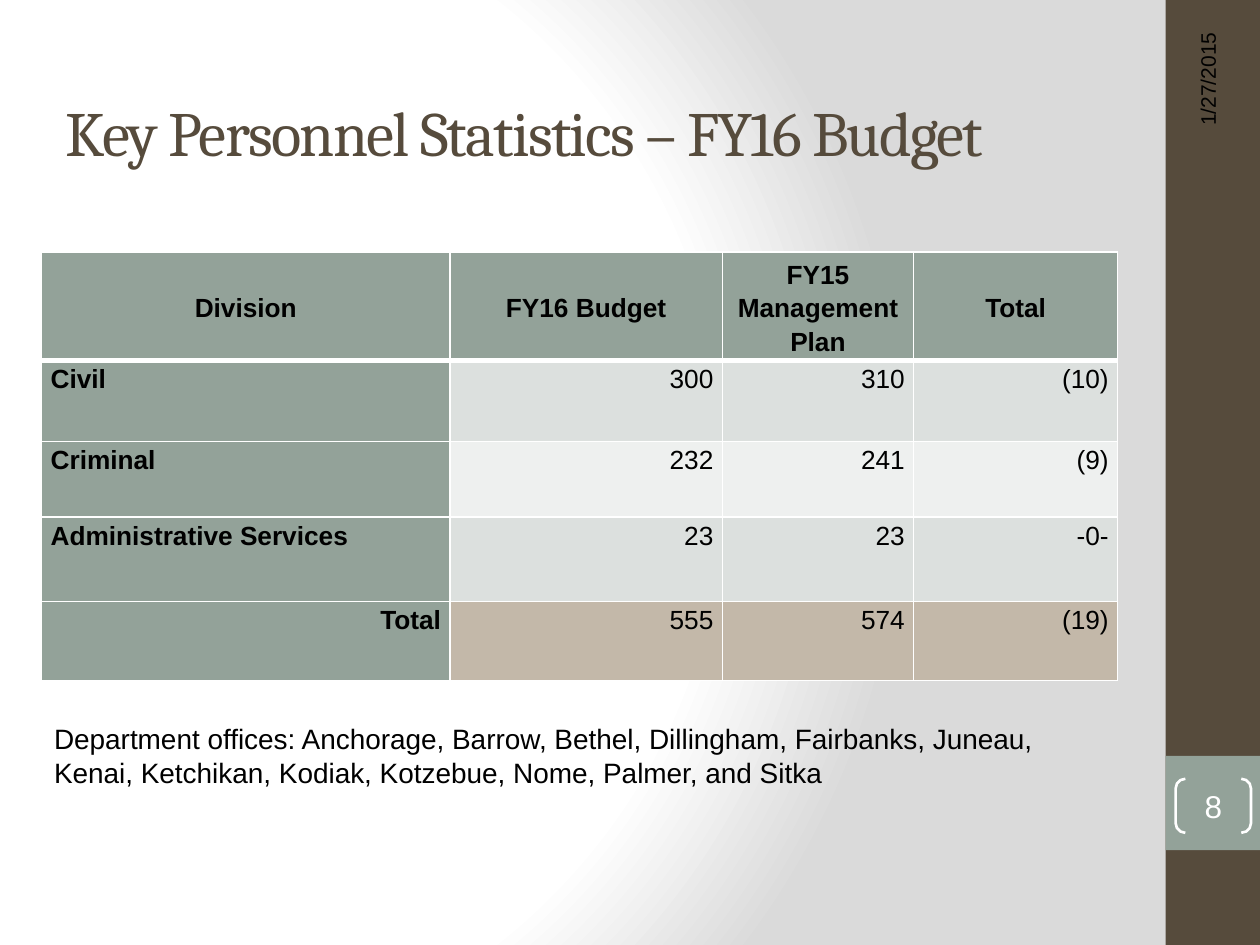
"""Build the key personnel statistics slide."""
from pptx import Presentation
from pptx import util as u
from pptx.dml.color import RGBColor
from pptx.enum import shapes, text
from pptx.oxml import parse_xml
from pptx.oxml.ns import nsdecls

TITLE = "Key Personnel Statistics – FY16 Budget"
DATE = "1/27/2015"
PAGE = "8"
OFFICES = ("Department offices: Anchorage, Barrow, Bethel, Dillingham, Fairbanks, Juneau, "
           "Kenai, Ketchikan, Kodiak, Kotzebue, Nome, Palmer, and Sitka")
ROWS = [
    ("Division", "FY16 Budget", "FY15 Management Plan", "Total"),
    ("Civil", "300", "310", "(10)"),
    ("Criminal", "232", "241", "(9)"),
    ("Administrative Services", "23", "23", "-0-"),
    ("Total", "555", "574", "(19)"),
]
COLUMN_WIDTHS = (8.23, 5.49, 3.86, 4.11)
ROW_HEIGHTS = (2.03, 1.63, 1.52, 1.7, 1.6)
BROWN, SAGE, WHITE, BLACK = "564B3C", "93A299", "FFFFFF", "000000"
ROW_FILLS = (SAGE, "DCE0DE", "EEF0EF", "DCE0DE", "C3B8A9")
LEFT, CENTER, RIGHT = text.PP_ALIGN.LEFT, text.PP_ALIGN.CENTER, text.PP_ALIGN.RIGHT
TOP, MIDDLE = text.MSO_ANCHOR.TOP, text.MSO_ANCHOR.MIDDLE


def paint(color_format, value):
    color_format.rgb = RGBColor.from_string(value)


def fill(target, value):
    target.fill.solid()
    paint(target.fill.fore_color, value)


def box(left, top, width, height):
    return [u.Cm(value) for value in (left, top, width, height)]


def write(frame, words, size, color, align=LEFT, bold=False, font="Arial"):
    frame.word_wrap = True
    paragraph = frame.paragraphs[0]
    paragraph.alignment = align
    run = paragraph.add_run()
    run.text = words
    run.font.size = u.Pt(size)
    run.font.name = font
    run.font.bold = bold
    paint(run.font.color, color)
    return paragraph, run


def add_background(slide):
    slide.background.fill.solid()
    properties = slide.element.xpath("p:cSld/p:bg/p:bgPr")[0]
    stops = "".join(f'<a:gs pos="{position * 1000}"><a:srgbClr val="{color}"/></a:gs>'
                    for position, color in ((0, WHITE), (75, WHITE), (100, "DADADA")))
    properties.replace(properties[0], parse_xml(
        f'<a:gradFill {nsdecls("a")} rotWithShape="1"><a:gsLst>{stops}</a:gsLst><a:path path="circle">'
        '<a:fillToRect l="20000" t="50000" r="100000" b="50000"/></a:path></a:gradFill>'))


def add_shape(slide, kind, place, color=None):
    shape = slide.shapes.add_shape(kind, *box(*place))
    shape.shadow.inherit = False
    if color:
        fill(shape, color)
        shape.line.fill.background()
    else:
        shape.fill.background()
    return shape


def add_title(slide):
    title = slide.shapes.title
    title.left, title.top, title.width, title.height = box(1.07, 0.84, 21.59, 3.6)
    title.text_frame.auto_size = text.MSO_AUTO_SIZE.NONE
    title.text_frame.vertical_anchor = MIDDLE
    run = write(title.text_frame, TITLE, 36, BROWN, font="Cambria")[1]
    properties = run.font._element
    properties.set("spc", "-100")
    properties.insert(0, parse_xml(f'<a:ln {nsdecls("a")} w="12700"><a:solidFill>'
                                   '<a:srgbClr val="42402C"/></a:solidFill></a:ln>'))


def add_text_box(slide, place, words, size, align=LEFT):
    text_box = slide.shapes.add_textbox(*box(*place))
    write(text_box.text_frame, words, size, BLACK, align)
    return text_box


def add_borders(cell, row):
    properties = cell._tc.get_or_add_tcPr()
    widths = {"L": 1, "R": 1, "T": 3 if row == 1 else 1, "B": 3 if row == 0 else 1}
    for side, points in widths.items():
        properties.append(parse_xml(
            f'<a:ln{side} {nsdecls("a")} w="{u.Pt(points)}"><a:solidFill>'
            f'<a:srgbClr val="{WHITE}"/></a:solidFill></a:ln{side}>'))


def add_statistics(slide):
    place = box(0.84, 5.08, sum(COLUMN_WIDTHS), sum(ROW_HEIGHTS))
    table = slide.shapes.add_table(len(ROWS), len(COLUMN_WIDTHS), *place).table
    table.first_col = True
    for column, width in zip(table.columns, COLUMN_WIDTHS):
        column.width = u.Cm(width)
    for row, height in zip(table.rows, ROW_HEIGHTS):
        row.height = u.Cm(height)
    for i, values in enumerate(ROWS):
        for j, value in enumerate(values):
            cell = table.cell(i, j)
            header = i == 0
            add_borders(cell, i)
            fill(cell, SAGE if j == 0 else ROW_FILLS[i])
            cell.margin_left = cell.margin_right = u.Cm(0.18)
            cell.margin_top = cell.margin_bottom = 0
            cell.vertical_anchor = MIDDLE if header else TOP
            label = j == 0 and i < len(ROWS) - 1
            align = CENTER if header else LEFT if label else RIGHT
            paragraph = write(cell.text_frame, value, 15, BLACK, align, header or j == 0)[0]
            paragraph.line_spacing = 1.15


def main():
    presentation = Presentation()
    presentation.slide_width, presentation.slide_height = u.Cm(25.4), u.Cm(19.05)
    slide = presentation.slides.add_slide(presentation.slide_layouts[5])
    add_background(slide)
    add_shape(slide, shapes.MSO_SHAPE.RECTANGLE, (23.5, 0, 1.9, 19.05), BROWN)
    add_shape(slide, shapes.MSO_SHAPE.RECTANGLE, (23.5, 15.24, 1.9, 1.9), SAGE)
    add_title(slide)

    date = add_text_box(slide, (20.85, 3.48, 6.99, 0.84), DATE, 12, RIGHT)
    date.rotation = 270
    date.text_frame.vertical_anchor = MIDDLE

    page = add_shape(slide, shapes.MSO_SHAPE.DOUBLE_BRACKET, (23.7, 15.7, 1.52, 1.09))
    page.adjustments[0] = 0.18
    page.line.width = u.Pt(1.5)
    paint(page.line.color, WHITE)
    frame = page.text_frame
    frame.margin_left = frame.margin_right = frame.margin_top = frame.margin_bottom = 0
    frame.vertical_anchor = MIDDLE
    write(frame, PAGE, 18, WHITE, CENTER)

    add_statistics(slide)
    offices = add_text_box(slide, (0.84, 13.77, 21.16, 3.68), OFFICES, 16)
    offices.text_frame.margin_top = u.Cm(0.78)
    presentation.save("out.pptx")


if __name__ == "__main__":
    main()
